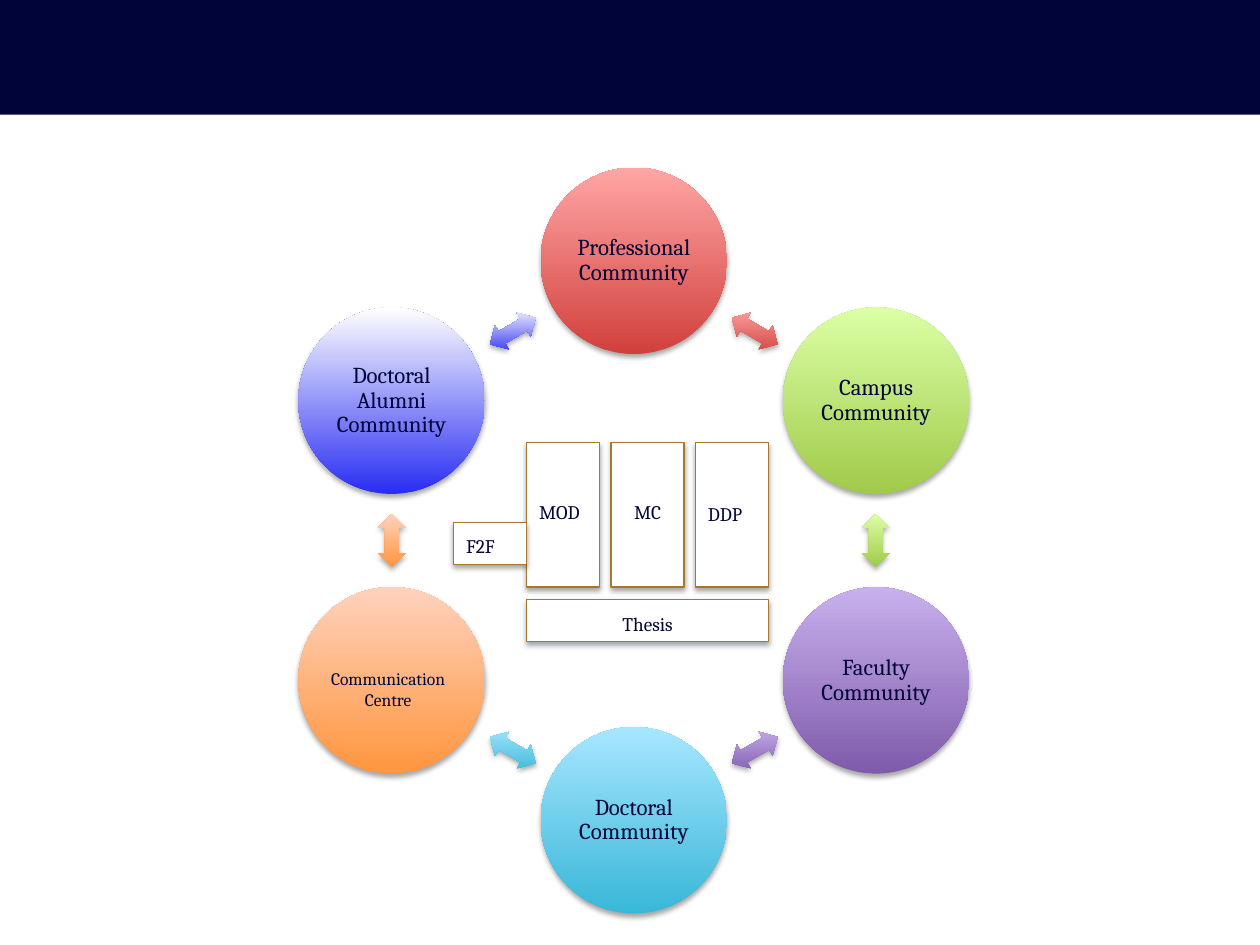
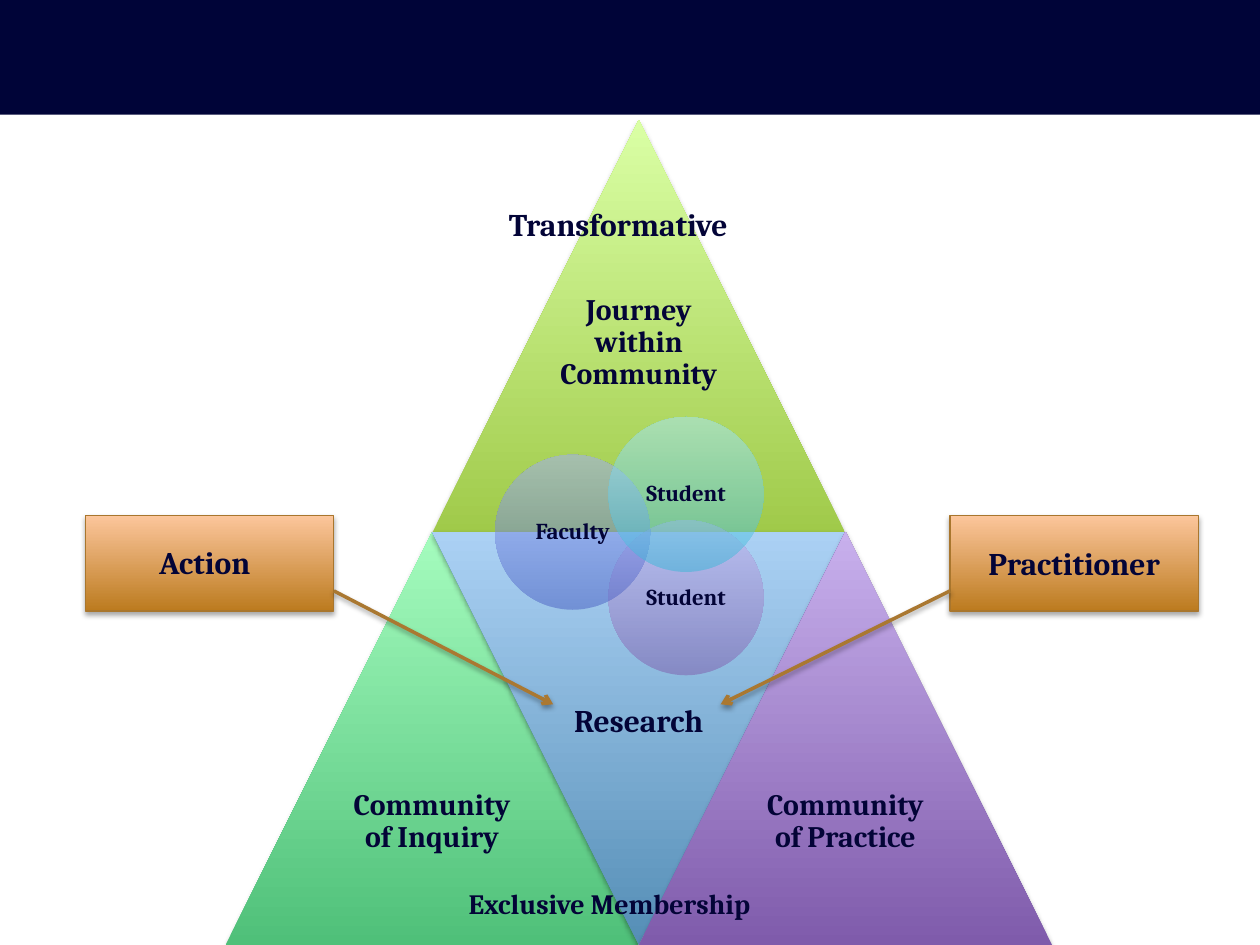
from copy import deepcopy
from math import cos, radians, sin

from lxml import etree
from pptx import Presentation
from pptx import util as u
from pptx.dml.color import RGBColor
from pptx.enum import shapes, text
from pptx.oxml import parse_xml
from pptx.oxml.ns import nsdecls, qn

COLOURS = {
    "band": "000438", "ink": "030437", "white": "FFFFFF",
    "border": "A9762D", "arrow": "AA7831",
    "red": ("D1403C", "FFA6A5"), "lime": ("A0CA4A", "DAFFA5"),
    "violet": ("7F5BAB", "C8B0ED"), "cyan": ("39B7D8", "A7E6FF"),
    "orange": ("FF953E", "FFD2BD"), "blue": ("292DF3", "FFFFFF"),
    "green": ("4FC079", "A5FCBE"), "steel": ("558EB6", "ABD1F4"),
    "indigo": ("495EC2", "A2ADFF"), "bronze": ("BC7B1F", "FCC69C"),
}
FONT = "Cambria"
KIND = shapes.MSO_SHAPE
LEFT, CENTER = text.PP_ALIGN.LEFT, text.PP_ALIGN.CENTER
TOP, MIDDLE = text.MSO_ANCHOR.TOP, text.MSO_ANCHOR.MIDDLE
SHADOW = parse_xml(
    f'<a:effectLst {nsdecls("a")}><a:outerShdw blurRad="39370" dist="22860" dir="5400000" '
    'rotWithShape="0"><a:srgbClr val="000000"><a:alpha val="35000"/></a:srgbClr>'
    '</a:outerShdw></a:effectLst>')


def draw(page, kind, at, colour, border=False, shadow=True, opacity=100, rotation=0):
    shape = page.shapes.add_shape(kind, *map(u.Inches, at))
    shape.rotation = rotation
    properties = shape.element.spPr
    fill = COLOURS[colour]
    if isinstance(fill, tuple):
        shape.fill.gradient()
        shape.fill.gradient_angle = 90
        for stop, value in zip(shape.fill.gradient_stops, fill):
            stop.color.rgb = RGBColor.from_string(value)
        properties.find(qn("a:gradFill")).set("rotWithShape", "0")
    else:
        shape.fill.solid()
        shape.fill.fore_color.rgb = RGBColor.from_string(fill)
    if opacity < 100:
        for value in properties.iter(qn("a:srgbClr")):
            etree.SubElement(value, qn("a:alpha"), val=str(opacity * 1000))
    if border:
        shape.line.color.rgb = RGBColor.from_string(COLOURS["border"])
        shape.line.width = u.Pt(0.75)
    else:
        shape.line.fill.background()
    if shadow:
        properties.append(deepcopy(SHADOW))
    else:
        shape.shadow.inherit = False
    return shape


def write(box, lines, size, bold=False, align=CENTER, anchor=MIDDLE, inset=(0.1, 0.05), spacing=1.0):
    frame = box.text_frame
    across, down = map(u.Inches, inset)
    frame_format = {"word_wrap": True, "vertical_anchor": anchor, "margin_left": across,
                    "margin_right": across, "margin_top": down, "margin_bottom": down}
    for name, value in frame_format.items():
        setattr(frame, name, value)
    for index, line in enumerate(lines):
        para = frame.paragraphs[0] if index == 0 else frame.add_paragraph()
        para.alignment = align
        para.line_spacing = spacing
        span = para.add_run()
        span.text = line
        for name, value in {"name": FONT, "size": u.Pt(size), "bold": bold}.items():
            setattr(span.font, name, value)
        span.font.color.rgb = RGBColor.from_string(COLOURS["ink"])


deck = Presentation()
deck.slide_width, deck.slide_height = u.Inches(10), u.Inches(7.5)
blank = deck.slide_layouts[6]
ring_page, pyramid_page = deck.slides.add_slide(blank), deck.slides.add_slide(blank)

band = draw(ring_page, KIND.RECTANGLE, (0, 0, 10.01, 0.91), "band", shadow=False)
deck.slide_master.shapes.element.insert(2, band.element)

ring_x, ring_y = 5.03, 4.29
circle_orbit, arrow_orbit = 2.22, 1.92
diameter, arrow_width, arrow_height = 1.48, 0.42, 0.22
communities = [
    ("Professional Community", "red"), ("Campus Community", "lime"),
    ("Faculty Community", "violet"), ("Doctoral Community", "cyan"),
    ("", "orange"), ("Doctoral Alumni Community", "blue"),
]
for index, (name, colour) in enumerate(communities):
    turn = 60 * index
    x = ring_x + circle_orbit * sin(radians(turn))
    y = ring_y - circle_orbit * cos(radians(turn))
    circle = draw(ring_page, KIND.OVAL,
                  (x - diameter / 2, y - diameter / 2, diameter, diameter), colour)
    if name:
        write(circle, [name], 13, inset=(0.02, 0.02), spacing=0.9)
    turn += 30
    x = ring_x + arrow_orbit * sin(radians(turn))
    y = ring_y - arrow_orbit * cos(radians(turn))
    draw(ring_page, KIND.LEFT_RIGHT_ARROW,
         (x - arrow_width / 2, y - arrow_height / 2, arrow_width, arrow_height),
         colour, rotation=turn)

centre_label = ring_page.shapes.add_textbox(*map(u.Inches, (2.48, 5.25, 1.2, 0.44)))
write(centre_label, ["Communication", "Centre"], 10, anchor=TOP)

courses = [
    ("MOD", (4.18, 3.51, 0.58, 1.15), 3.92, LEFT),
    ("MC", (4.85, 3.51, 0.58, 1.15), 3.92, CENTER),
    ("DDP", (5.52, 3.51, 0.58, 1.15), 3.94, LEFT),
    ("F2F", (3.6, 4.15, 0.58, 0.33), 4.19, LEFT),
    ("Thesis", (4.18, 4.76, 1.92, 0.33), 4.81, CENTER),
]
for name, at, label_top, align in courses:
    draw(ring_page, KIND.RECTANGLE, at, "white", border=True)
    label = ring_page.shapes.add_textbox(*map(u.Inches, (at[0], label_top, at[2], 0.29)))
    write(label, [name], 11, align=align, anchor=TOP)

side = 3.28
half = side / 2
apex_left, upper, lower = 3.43, 0.95, 4.22
triangles = [
    ("Journey within Community", "lime", 0, upper, 0, 2.72, 17),
    ("Community of Inquiry", "green", -1, lower, 0, 6.52, 17),
    ("Research", "steel", 0, lower, 180, 5.73, 18),
    ("Community of Practice", "violet", 1, lower, 0, 6.52, 17),
]
for name, colour, step, top, rotation, label_middle, size in triangles:
    left = apex_left + step * half
    draw(pyramid_page, KIND.ISOSCELES_TRIANGLE, (left, top, side, side), colour, rotation=rotation)
    label = pyramid_page.shapes.add_textbox(
        *map(u.Inches, (left + half / 2, label_middle - 0.5, half, 1)))
    write(label, [name], size, bold=True, inset=(0.07, 0.07), spacing=0.9)

action = draw(pyramid_page, KIND.RECTANGLE, (0.68, 4.09, 1.97, 0.76), "bronze", border=True)
action_label = pyramid_page.shapes.add_textbox(*map(u.Inches, (0.74, 4.26, 1.77, 0.4)))
write(action_label, ["Action"], 18, bold=True, anchor=TOP)
practitioner = draw(pyramid_page, KIND.RECTANGLE, (7.54, 4.09, 1.97, 0.76), "bronze", border=True)
write(practitioner, ["Practitioner"], 18, bold=True)

members = [("Student", "violet", 4.83, 4.13), ("Faculty", "indigo", 3.93, 3.61),
           ("Student", "cyan", 4.83, 3.31)]
for name, colour, left, top in members:
    circle = draw(pyramid_page, KIND.OVAL, (left, top, 1.23, 1.23), colour, shadow=False, opacity=50)
    write(circle, [name], 13, bold=True, inset=(0.07, 0.02), spacing=0.9)

for start_x, end_x in [(2.65, 4.39), (7.54, 5.72)]:
    arrow = pyramid_page.shapes.add_connector(
        shapes.MSO_CONNECTOR.STRAIGHT, *map(u.Inches, (start_x, 4.69, end_x, 5.59)))
    arrow.line.color.rgb = RGBColor.from_string(COLOURS["arrow"])
    arrow.line.width = u.Pt(2)
    properties = arrow.element.spPr
    etree.SubElement(properties.find(qn("a:ln")), qn("a:tailEnd"), type="arrow")
    properties.append(deepcopy(SHADOW))

captions = [("Transformative", 18, (3.94, 1.58, 2.23, 0.4)),
            ("Exclusive Membership", 16, (3.62, 6.99, 2.82, 0.37))]
for name, size, at in captions:
    caption = pyramid_page.shapes.add_textbox(*map(u.Inches, at))
    write(caption, [name], size, bold=True, align=LEFT, anchor=TOP)

deck.save("out.pptx")
